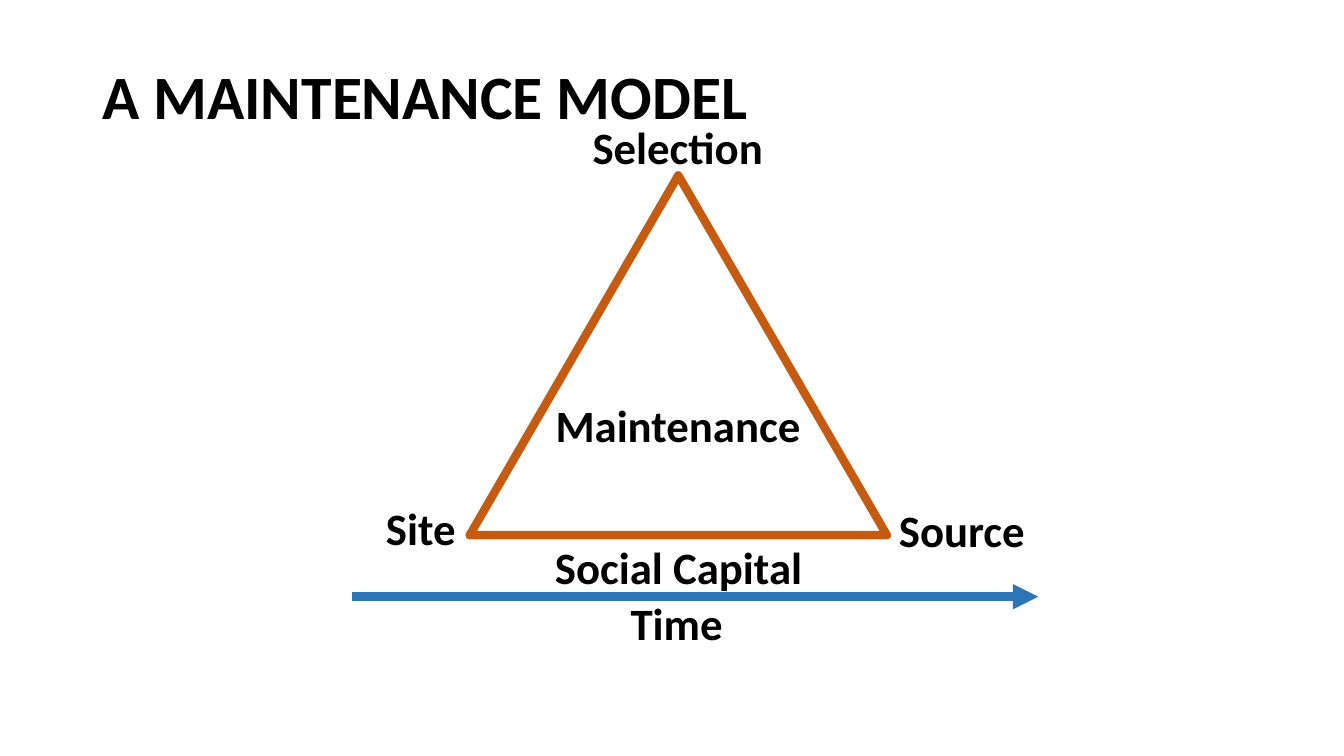
import pptx
import pptx.util
import pptx.dml.color
import pptx.enum.shapes
import pptx.enum.text
import pptx.oxml.ns
import lxml.etree

Pt = pptx.util.Pt
RGBColor = pptx.dml.color.RGBColor
MSO_ANCHOR = pptx.enum.text.MSO_ANCHOR
PP_ALIGN = pptx.enum.text.PP_ALIGN
qn = pptx.oxml.ns.qn

BLACK = RGBColor(0x00, 0x00, 0x00)
ORANGE = RGBColor(0xC5, 0x5A, 0x11)
BLUE = RGBColor(0x2E, 0x75, 0xB6)


class SlideBuilder:
    font = {"name": "Calibri", "bold": True}
    line_width = Pt(6)

    def __init__(self, prs):
        self.s = prs.slides.add_slide(prs.slide_layouts[6])

    def text(self, text, box, size, anchor, para):
        tb = self.s.shapes.add_textbox(*map(Pt, box))
        tf = tb.text_frame
        tf.word_wrap = True
        tf.vertical_anchor = anchor
        p = tf.paragraphs[0]
        for key, value in para.items():
            setattr(p, key, value)
        r = p.add_run()
        r.text = text
        for key, value in {**self.font, "size": Pt(size)}.items():
            setattr(r.font, key, value)
        r.font.color.rgb = BLACK
        return tf

    def title(self, text, box):
        self.text(text, box, 44, MSO_ANCHOR.TOP, {"line_spacing": 0.9})

    def label(self, text, box):
        tf = self.text(text, box, 32, MSO_ANCHOR.MIDDLE, {"alignment": PP_ALIGN.CENTER})
        tf.auto_size = pptx.enum.text.MSO_AUTO_SIZE.SHAPE_TO_FIT_TEXT

    def stroke(self, line, color):
        line.color.rgb = color
        line.width = self.line_width

    def triangle(self, box, color):
        sp = self.s.shapes.add_shape(
            pptx.enum.shapes.MSO_SHAPE.ISOSCELES_TRIANGLE, *map(Pt, box))
        sp.shadow.inherit = False
        sp.fill.background()
        self.stroke(sp.line, color)

    def arrow(self, start, end, color):
        cx = self.s.shapes.add_connector(
            pptx.enum.shapes.MSO_CONNECTOR.STRAIGHT, *map(Pt, start + end))
        self.stroke(cx.line, color)
        sppr = cx._element.spPr
        lxml.etree.SubElement(sppr.find(qn("a:ln")), qn("a:tailEnd"), type="triangle")
        lxml.etree.SubElement(sppr, qn("a:effectLst"))


def main():
    prs = pptx.Presentation()
    prs.slide_width, prs.slide_height = Pt(960), Pt(540)
    b = SlideBuilder(prs)
    b.title("A MAINTENANCE MODEL", (66, 44, 828, 89))
    b.triangle((335.5, 125.3, 298, 257), ORANGE)
    b.arrow((251.3, 426.2), (741.6, 426.2), BLUE)
    labels = {
        "Selection": (348.5, 81.4, 271.4, 46),
        "Site": (211.7, 354.2, 177.8, 46),
        "Source": (609, 355, 156.2, 46),
        "Maintenance": (387.2, 280, 194.4, 46),
        "Time": (411, 425.5, 144.7, 38.2),
        "Social Capital": (379.4, 381.6, 211, 46),
    }
    for text, box in labels.items():
        b.label(text, box)
    prs.save("out.pptx")


if __name__ == "__main__":
    main()
